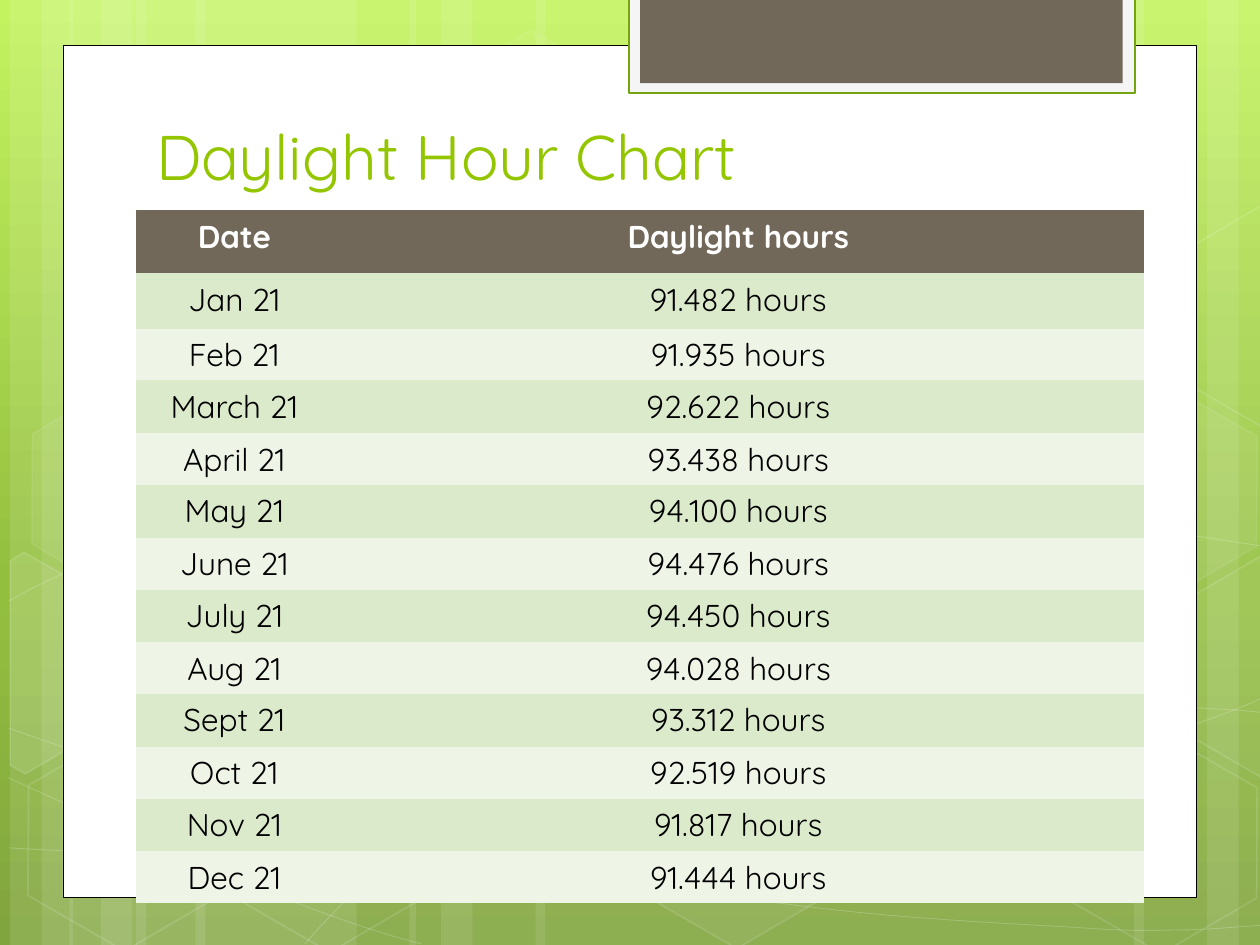
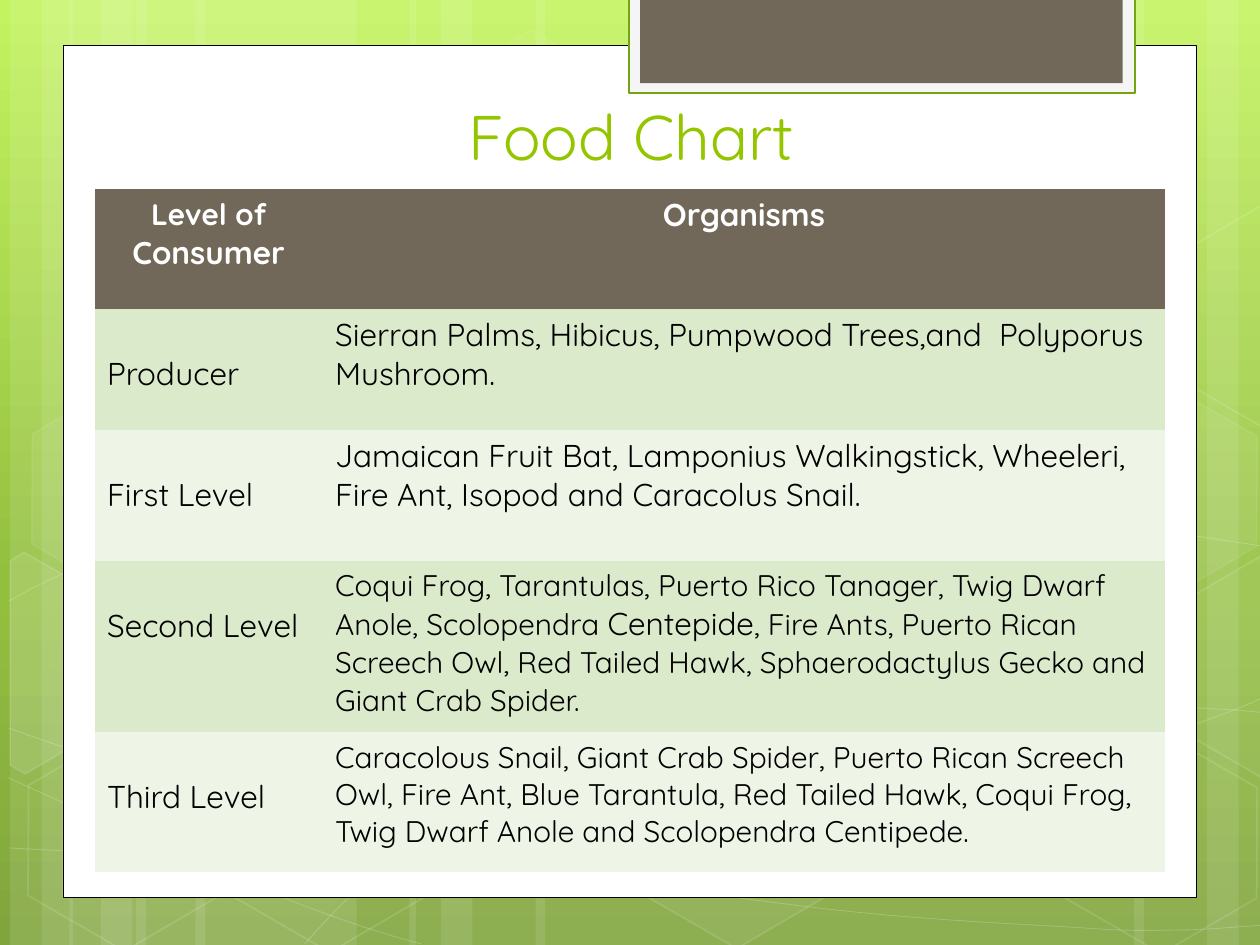
from copy import deepcopy
from dataclasses import dataclass
from math import cos, radians, sin

from lxml import etree
from pptx import Presentation
from pptx import util as u
from pptx.dml.color import RGBColor
from pptx.enum import shapes, text
from pptx.oxml import ns


@dataclass(frozen=True)
class Theme:
    font: str = "Quicksand"
    title_size: int = 36
    body_size: int = 18
    small_size: int = 17
    white: str = "FFFFFF"
    black: str = "000000"
    title: str = "94C600"
    brown: str = "71685A"
    tab_fill: str = "F5F5F5"
    tab_line: str = "74A510"
    bands: tuple = ("DCEACC", "EEF5E7")
    gradient: tuple = ((0, "C3F35F"), (0.62, "93BF3F"), (1, "81A53E"))


THEME = Theme()
SLIDE_WIDTH, SLIDE_HEIGHT = 10, 7.5
CENTER, LEFT = text.PP_ALIGN.CENTER, text.PP_ALIGN.LEFT

DAYLIGHT = [
    ("Date", "Daylight hours"),
    ("Jan 21", "91.482 hours"),
    ("Feb 21", "91.935 hours"),
    ("March 21", "92.622 hours"),
    ("April 21", "93.438 hours"),
    ("May 21", "94.100 hours"),
    ("June 21", "94.476 hours"),
    ("July 21", "94.450 hours"),
    ("Aug 21", "94.028 hours"),
    ("Sept 21", "93.312 hours"),
    ("Oct 21", "92.519 hours"),
    ("Nov 21", "91.817 hours"),
    ("Dec 21", "91.444 hours"),
]

SMALL, BODY = THEME.small_size, THEME.body_size
FOOD = [
    ([("Level of ", SMALL), ("Consumer", BODY)], "Organisms"),
    ("Producer", "Sierran Palms, Hibicus, Pumpwood Trees,and  Polyporus Mushroom."),
    ("First Level", "Jamaican Fruit Bat, Lamponius Walkingstick, Wheeleri, "
                    "Fire Ant, Isopod and Caracolus Snail."),
    ("Second Level", [
        ("Coqui Frog, Tarantulas, Puerto Rico Tanager, Twig Dwarf Anole, Scolopendra ", SMALL),
        ("Centepide", BODY),
        (", Fire Ants, Puerto Rican Screech Owl, Red Tailed Hawk, "
         "Sphaerodactylus Gecko and Giant Crab Spider.", SMALL)]),
    ("Third Level", [
        ("Caracolous Snail, Giant Crab Spider, Puerto Rican Screech Owl, Fire Ant, "
         "Blue Tarantula, Red Tailed Hawk, Coqui Frog, Twig Dwarf Anole and "
         "Scolopendra Centipede.", SMALL)]),
]

PAGES = [
    dict(title="Daylight Hour Chart", title_box=(1.14, 0.83, 7.28, 0.75), title_align=LEFT,
         rows=DAYLIGHT, origin=(1.08, 1.67), widths=(1.56, 6.44),
         heights=[0.5, 0.44, 0.41] + [0.42, 0.41] * 5, body_align=CENTER, label_top=0.05),
    dict(title="Food Chart", title_box=(1.17, 0.67, 7.68, 0.75), title_align=CENTER,
         rows=FOOD, origin=(0.75, 1.5), widths=(1.81, 6.69),
         heights=[0.95, 0.96, 1.04, 1.36, 1.11], body_align=LEFT, label_top=0.36),
]

STRIPES = [
    (1.08, 1.75, 0), (0.08, 0.5, 0), (0.33, 0.83, 0), (1.55, 1.75, 0), (0.55, 0.5, 0),
    (0.8, 0.83, 0), (7.33, 1.75, 180), (9.58, 0.5, 180), (9, 0.83, 180),
    (4.25, 3.08, 0), (3.25, 0.5, 0), (3.5, 0.83, 0),
]

CURVES = [
    ((0.07, 6.73), [(0.61, 6.76, 1.15, 6.79, 1.9, 6.78), (2.65, 6.77, 3.58, 6.75, 4.58, 6.65),
                    (5.58, 6.55, 7, 6.36, 7.92, 6.17), (8.83, 5.98, 9.77, 5.68, 10.07, 5.51)]),
    ((0.07, 4.77), [(0.36, 4.61, 0.65, 4.46, 1.21, 4.31), (1.78, 4.16, 2.59, 3.94, 3.47, 3.87),
                    (4.36, 3.8, 5.44, 3.79, 6.54, 3.87), (7.64, 3.95, 9.47, 4.26, 10.07, 4.34)]),
    ((0.06, 6.17), [(1.27, 6.72, 2.47, 7.27, 3.34, 7.49)]),
    ((0.07, 5.78), [(0.38, 5.89, 0.7, 6, 1.28, 6.16), (1.86, 6.31, 2.73, 6.56, 3.57, 6.73),
                    (4.4, 6.9, 5.45, 7.08, 6.28, 7.18), (7.11, 7.29, 8, 7.33, 8.53, 7.36),
                    (9.05, 7.4, 9.19, 7.38, 9.45, 7.38), (9.71, 7.37, 9.89, 7.35, 10.07, 7.34)]),
    ((2.42, 7.49), [(2.6, 7.29, 2.78, 7.09, 3.02, 6.91), (3.26, 6.73, 3.6, 6.53, 3.88, 6.39),
                    (4.16, 6.25, 4.33, 6.19, 4.7, 6.09), (5.06, 5.99, 5.73, 5.85, 6.08, 5.78),
                    (6.44, 5.71, 6.49, 5.71, 6.8, 5.69), (7.11, 5.66, 7.6, 5.63, 7.94, 5.62),
                    (8.29, 5.61, 8.86, 5.62, 8.86, 5.62), (9.53, 5.62),
                    (9.71, 5.63, 9.88, 5.64, 9.97, 5.65),
                    (10.06, 5.66, 10.03, 5.65, 10.06, 5.66)]),
]

HEXAGON_TILT = 30
HEXAGONS = [
    (3.34, 0.36, 4, 8), (4.97, 5.89, 6, 12),
    ([(0.08, 4.45), (0.19, 4.38), (0.96, 4.82), (0.95, 5.7), (0.2, 6.14), (0.08, 6.07)],
     (0.36, 5.35), 10, 12),
    (0.11, 5.91, 0, 12), (0.14, 3.12, 7, 8), (1.74, 5.92, 0, 12),
    (7.53, 4.53, 10, 12), (8.34, 5.93, 0, 12), (8.34, 3.14, 7, 8),
    ([(9.26, 4.85), (10.01, 4.41), (10.09, 4.46), (10.09, 6.13), (10.02, 6.17), (9.26, 5.73)],
     (9.85, 5.2), 4, 12),
    ([(9.26, 2.07), (10.01, 1.63), (10.1, 1.68), (10.09, 3.35), (10.02, 3.39), (9.26, 2.95)],
     (9.85, 2.41), 0, 12),
]


def inches(values):
    return [u.Inches(value) for value in values]


def set_alpha(shape, parent, percent):
    color = shape.element.xpath(f"./p:spPr/{parent}a:solidFill/a:srgbClr")[0]
    etree.SubElement(color, ns.qn("a:alpha"), val=str(percent * 1000))


def paint(shape, fill=None, fill_alpha=100, line=None, line_width=1, line_alpha=100):
    shape.shadow.inherit = False
    if fill and fill_alpha:
        shape.fill.solid()
        shape.fill.fore_color.rgb = RGBColor.from_string(fill)
        if fill_alpha < 100:
            set_alpha(shape, "", fill_alpha)
    else:
        shape.fill.background()
    if line:
        shape.line.width = u.Pt(line_width)
        shape.line.color.rgb = RGBColor.from_string(line)
        if line_alpha < 100:
            set_alpha(shape, "a:ln/", line_alpha)
    else:
        shape.line.fill.background()


def add_preset(slide, kind, box, **look):
    shape = slide.shapes.add_shape(kind, *inches(box))
    paint(shape, **look)
    return shape


def add_outline(slide, points, close):
    start, *others = [inches(point) for point in points]
    builder = slide.shapes.build_freeform(*start)
    builder.add_line_segments(others, close=close)
    return builder.convert_to_shape()


def add_curve(slide, start, segments):
    shape = add_outline(slide, [start] + [segment[-2:] for segment in segments], False)
    for line_to, segment in zip(shape.element.xpath(".//a:lnTo"), segments):
        if len(segment) == 2:
            continue
        line_to.tag = ns.qn("a:cubicBezTo")
        end_point = line_to[0]
        for x, y in (segment[0:2], segment[2:4]):
            control = deepcopy(end_point)
            control.set("x", str(u.Inches(x) - shape.left))
            control.set("y", str(u.Inches(y) - shape.top))
            end_point.addprevious(control)
    paint(shape, line=THEME.white, line_width=0.5, line_alpha=20)


def turn_back(point, pivot):
    angle = radians(HEXAGON_TILT)
    x, y = point[0] - pivot[0], point[1] - pivot[1]
    return (pivot[0] + x * cos(angle) + y * sin(angle),
            pivot[1] - x * sin(angle) + y * cos(angle))


def add_hexagon(slide, first, second, fill_alpha, line_alpha):
    if isinstance(first, list):
        points = [turn_back(point, second) for point in first]
        hexagon = add_outline(slide, points, True)
    else:
        box = inches((first, second, 1.75, 1.52))
        hexagon = slide.shapes.add_shape(shapes.MSO_SHAPE.HEXAGON, *box)
        hexagon.adjustments[0] = 0.285
    hexagon.rotation = HEXAGON_TILT
    paint(hexagon, fill=THEME.white, fill_alpha=fill_alpha,
          line=THEME.white, line_alpha=line_alpha)


def add_background(slide):
    fill = slide.background.fill
    fill.gradient()
    fill.gradient_angle = 270
    stop_list = slide.element.xpath(".//p:bg//a:gsLst")[0]
    stop_list.append(deepcopy(stop_list[-1]))
    for stop, (position, color) in zip(fill.gradient_stops, THEME.gradient):
        stop.position = position
        stop.color.rgb = RGBColor.from_string(color)


def add_decoration(slide):
    rectangle = shapes.MSO_SHAPE.RECTANGLE
    for left, width, rotation in STRIPES:
        stripe = add_preset(slide, rectangle, (left, 0, width, SLIDE_HEIGHT),
                            fill=THEME.white, fill_alpha=10)
        stripe.rotation = rotation
    for start, segments in CURVES:
        add_curve(slide, start, segments)
    for hexagon in HEXAGONS:
        add_hexagon(slide, *hexagon)
    add_preset(slide, rectangle, (0.5, 0.36, 9, 6.76),
               fill=THEME.white, line=THEME.black, line_width=0.5)
    add_preset(slide, rectangle, (4.99, -0.02, 4.02, 0.76),
               fill=THEME.tab_fill, line=THEME.tab_line, line_width=1.25)
    add_preset(slide, rectangle, (5.08, -0.02, 3.83, 0.68), fill=THEME.brown)


def style_run(run, size, color, bold=False):
    run.font.name = THEME.font
    run.font.size = u.Pt(size)
    run.font.bold = bold
    run.font.color.rgb = RGBColor.from_string(color)


def add_title(slide, page):
    text_frame = slide.shapes.add_textbox(*inches(page["title_box"])).text_frame
    text_frame.word_wrap = True
    text_frame.vertical_anchor = text.MSO_ANCHOR.BOTTOM
    text_frame.text = page["title"]
    paragraph = text_frame.paragraphs[0]
    paragraph.alignment = page["title_align"]
    style_run(paragraph.runs[0], THEME.title_size, THEME.title)


def fill_cell(cell, content, is_header, align, fill):
    cell.fill.solid()
    cell.fill.fore_color.rgb = RGBColor.from_string(fill)
    paragraph = cell.text_frame.paragraphs[0]
    paragraph.alignment = align
    pieces = [(content, THEME.body_size)] if isinstance(content, str) else content
    for words, size in pieces:
        run = paragraph.add_run()
        run.text = words
        style_run(run, size, THEME.white if is_header else THEME.black, is_header)


def add_data_table(slide, page):
    rows, widths, heights = page["rows"], page["widths"], page["heights"]
    box = inches((*page["origin"], sum(widths), sum(heights)))
    frame = slide.shapes.add_table(len(rows), len(widths), *box)
    frame.element.xpath(".//a:tableStyleId")[0].text = "{2D5ABB26-0587-4C30-8999-92F81FD0307C}"
    table = frame.table
    table.horz_banding = False
    for column, width in zip(table.columns, widths):
        column.width = u.Inches(width)
    for row_index, (row, height) in enumerate(zip(rows, heights)):
        table.rows[row_index].height = u.Inches(height)
        is_header = row_index == 0
        fill = THEME.brown if is_header else THEME.bands[(row_index - 1) % 2]
        align = CENTER if is_header else page["body_align"]
        for column_index, content in enumerate(row):
            fill_cell(table.cell(row_index, column_index), content, is_header, align, fill)
        if not is_header:
            table.cell(row_index, 0).margin_top = u.Inches(page["label_top"])


def main():
    presentation = Presentation()
    presentation.slide_width = u.Inches(SLIDE_WIDTH)
    presentation.slide_height = u.Inches(SLIDE_HEIGHT)
    for page in PAGES:
        slide = presentation.slides.add_slide(presentation.slide_layouts[6])
        add_background(slide)
        add_decoration(slide)
        add_title(slide, page)
        add_data_table(slide, page)
    presentation.save("out.pptx")


if __name__ == "__main__":
    main()
